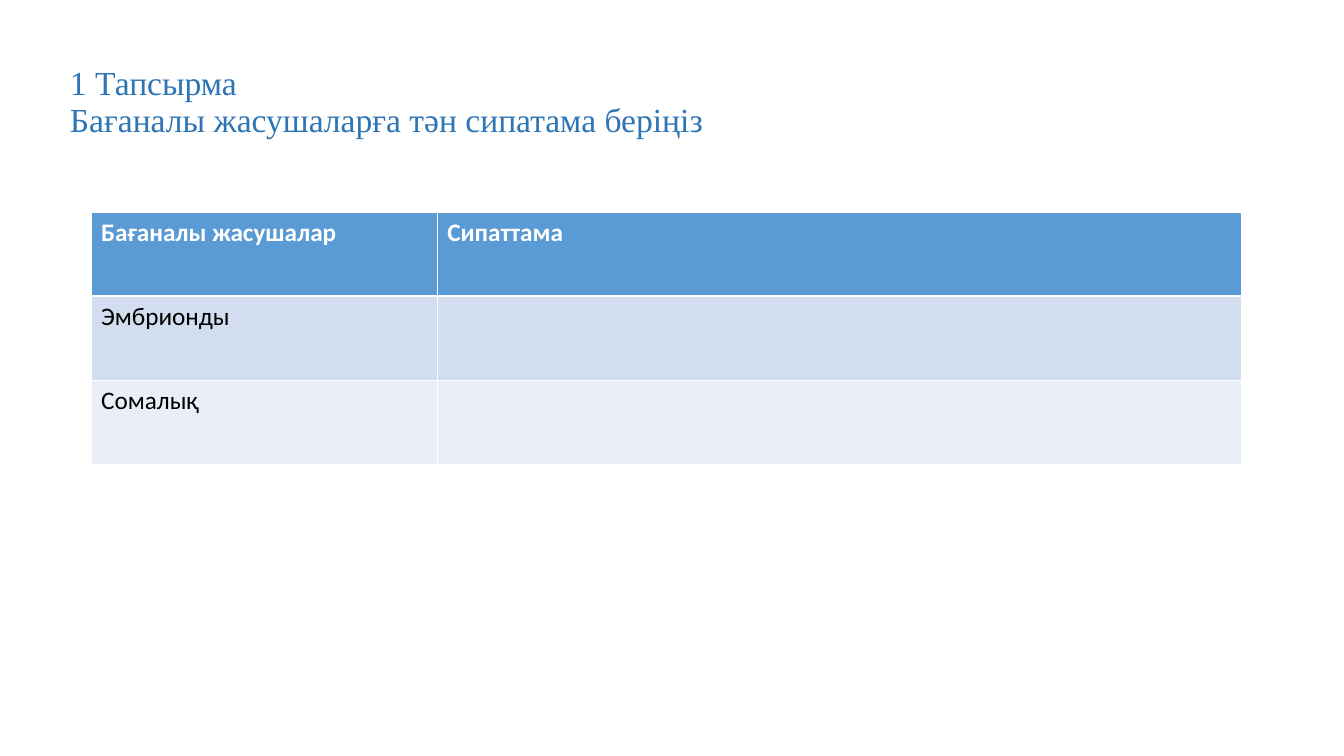
"""Build the stem cell task slide with a title and a table to fill in."""
from lxml.etree import SubElement
from pptx import Presentation
from pptx.dml.color import RGBColor
from pptx.enum.text import MSO_ANCHOR
from pptx.oxml.ns import qn
from pptx.util import Pt

PX = 9080
ROW_H = 84
COL_W = [346, 803]
FILLS = ["5B9BD5", "D2DEEF", "EAEFF7"]
ROWS = [
    ["Бағаналы жасушалар", "Сипаттама"],
    ["Эмбрионды", ""],
    ["Сомалық", ""],
]


def rgb(value):
    return RGBColor.from_string(value)


def add_border(cell, side, width):
    ln = SubElement(cell._tc.get_or_add_tcPr(), qn(f"a:ln{side}"), w=str(Pt(width)))
    fill = SubElement(ln, qn("a:solidFill"))
    SubElement(fill, qn("a:srgbClr"), val="FFFFFF")


prs = Presentation()
prs.slide_width = 1343 * PX
prs.slide_height = 755 * PX
s = prs.slides.add_slide(prs.slide_layouts[6])

title = s.shapes.add_textbox(60 * PX, 39 * PX, 1193 * PX, 128 * PX)
tf = title.text_frame
tf.word_wrap = True
tf.vertical_anchor = MSO_ANCHOR.MIDDLE
p = tf.paragraphs[0]
p.text = "1 Тапсырма\vБағаналы жасушаларға тән сипатама беріңіз"
p.line_spacing = 0.9
for r in p.runs:
    r.font.name = "Times New Roman"
    r.font.size = Pt(24)
    r.font.color.rgb = rgb("2E75B6")

frame = s.shapes.add_table(
    len(ROWS), len(COL_W), 91 * PX, 212 * PX, sum(COL_W) * PX, len(ROWS) * ROW_H * PX
)
table = frame.table
for col, width in zip(table.columns, COL_W):
    col.width = width * PX

for i, texts in enumerate(ROWS):
    table.rows[i].height = ROW_H * PX
    header = i == 0
    for j, text in enumerate(texts):
        cell = table.cell(i, j)
        add_border(cell, "L", 0.45)
        add_border(cell, "R", 0.45)
        add_border(cell, "T", 1.47 if i == 1 else 0.45)
        add_border(cell, "B", 1.47 if header else 0.45)
        cell.fill.solid()
        cell.fill.fore_color.rgb = rgb(FILLS[i])
        p = cell.text_frame.paragraphs[0]
        p.text = text
        for r in p.runs:
            r.font.name = "Calibri"
            r.font.size = Pt(18)
            r.font.bold = header
            r.font.color.rgb = rgb("FFFFFF" if header else "000000")

prs.save("out.pptx")
